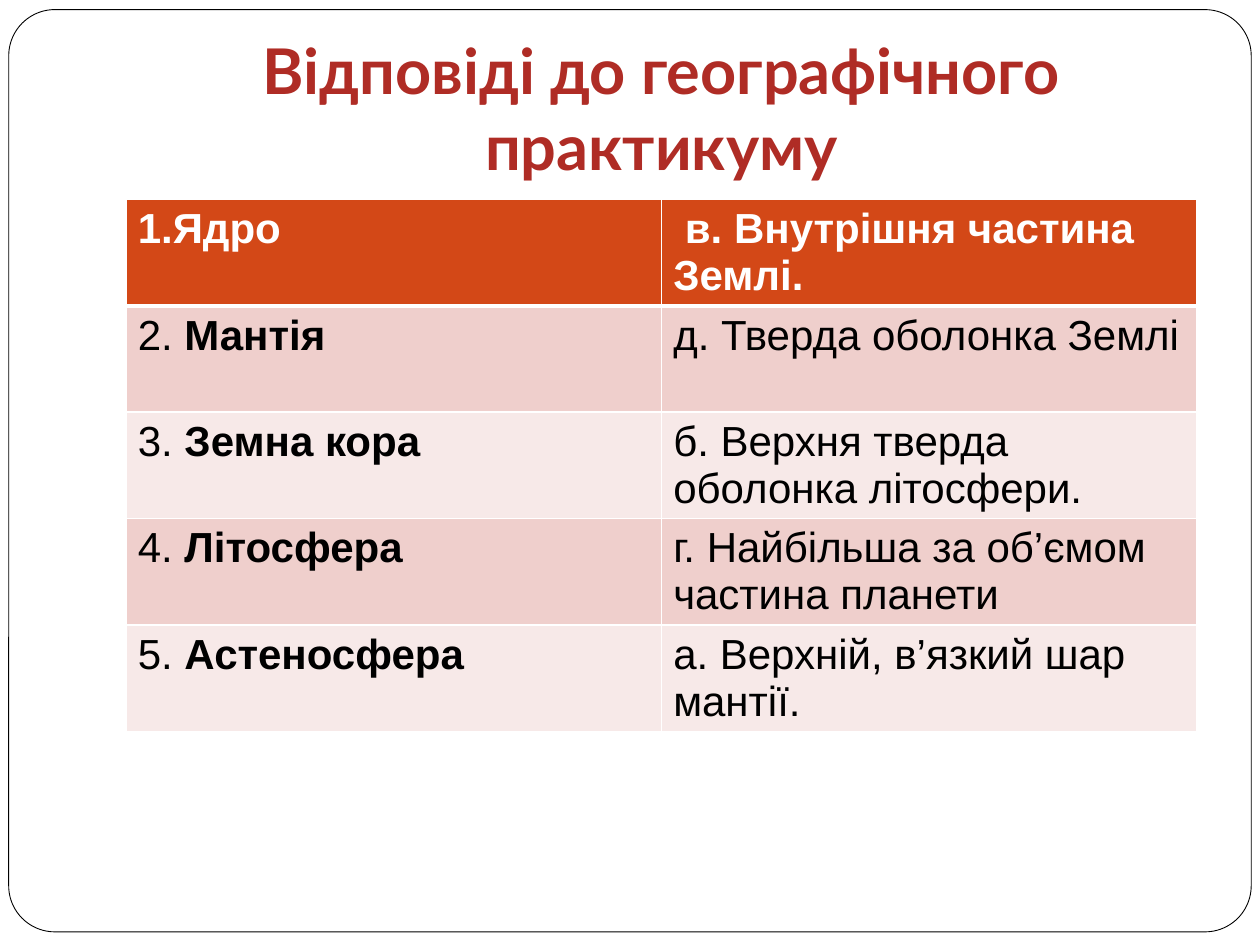
from dataclasses import dataclass

from lxml import etree
from pptx import Presentation
from pptx.dml.color import RGBColor
from pptx.enum.shapes import MSO_SHAPE
from pptx.enum.text import MSO_ANCHOR, MSO_AUTO_SIZE, PP_ALIGN
from pptx.oxml.ns import qn
from pptx.util import Pt

ROUNDED_RECTANGLE = MSO_SHAPE.ROUNDED_RECTANGLE
BOTTOM = MSO_ANCHOR.BOTTOM
CENTER = PP_ALIGN.CENTER
NO_AUTOFIT = MSO_AUTO_SIZE.NONE
TITLE_ONLY = 5


@dataclass(frozen=True)
class Theme:
    title_font: str = "Lato"
    body_font: str = "Arial"
    title_size: int = 36
    body_size: int = 24
    title: str = "AF2C25"
    text: str = "000000"
    light: str = "FFFFFF"
    header: str = "D34817"
    bands: tuple = ("EFCFCC", "F7E9E8")


THEME = Theme()
TITLE = "Відповіді до географічного практикуму"
ANSWERS = [
    (("1.", "Ядро"), " в. Внутрішня частина Землі."),
    (("2.", " Мантія"), "д. Тверда оболонка Землі"),
    (("3.", " Земна кора"), "б. Верхня тверда оболонка літосфери."),
    (("4.", " Літосфера"), "г. Найбільша за об’ємом частина планети"),
    (("5.", " Астеносфера"), "а. Верхній, в’язкий шар мантії."),
]


def place(shape, box):
    shape.left, shape.top, shape.width, shape.height = map(Pt, box)


def style_run(run, font, size, color, bold):
    run.font.name = font
    run.font.size = Pt(size)
    run.font.bold = bold
    run.font.color.rgb = RGBColor.from_string(color)


def add_frame(slide, box):
    frame = slide.shapes.add_shape(ROUNDED_RECTANGLE, *map(Pt, box))
    frame.adjustments[0] = 0.05
    frame.shadow.inherit = False
    frame.fill.solid()
    frame.fill.fore_color.rgb = RGBColor.from_string(THEME.light)
    frame.line.color.rgb = RGBColor.from_string(THEME.text)
    frame.line.width = Pt(0.5)
    slide.shapes.title._element.addprevious(frame._element)


def add_title(slide, box):
    title = slide.shapes.title
    place(title, box)
    text_frame = title.text_frame
    text_frame.text = TITLE
    text_frame.word_wrap = True
    text_frame.auto_size = NO_AUTOFIT
    text_frame.vertical_anchor = BOTTOM
    text_frame.margin_bottom = Pt(7.2)
    paragraph = text_frame.paragraphs[0]
    paragraph.alignment = CENTER
    style_run(paragraph.runs[0], THEME.title_font, THEME.title_size, THEME.title, True)


def set_borders(cell, top, bottom):
    properties = cell._tc.get_or_add_tcPr()
    for side, width in (("L", 1), ("R", 1), ("T", top), ("B", bottom)):
        line = etree.SubElement(properties, qn(f"a:ln{side}"), w=str(Pt(width)))
        fill = etree.SubElement(line, qn("a:solidFill"))
        etree.SubElement(fill, qn("a:srgbClr"), val=THEME.light)


def fill_cell(cell, parts, row):
    is_header = row == 0
    set_borders(cell, 3 if row == 1 else 1, 3 if is_header else 1)
    cell.fill.solid()
    background = THEME.header if is_header else THEME.bands[(row - 1) % 2]
    cell.fill.fore_color.rgb = RGBColor.from_string(background)
    cell.margin_left = cell.margin_right = Pt(6.75)
    paragraph = cell.text_frame.paragraphs[0]
    for text, bold in parts:
        run = paragraph.add_run()
        run.text = text
        color = THEME.light if is_header else THEME.text
        style_run(run, THEME.body_font, THEME.body_size, color, bold or is_header)


def add_answers(slide, box):
    table = slide.shapes.add_table(len(ANSWERS), 2, *map(Pt, box)).table
    for row, ((number, term), definition) in enumerate(ANSWERS):
        fill_cell(table.cell(row, 0), [(number, False), (term, True)], row)
        fill_cell(table.cell(row, 1), [(definition, False)], row)


def main():
    presentation = Presentation()
    presentation.slide_width, presentation.slide_height = Pt(720), Pt(540)
    slide = presentation.slides.add_slide(presentation.slide_layouts[TITLE_ONLY])
    add_frame(slide, (5, 5.5, 710, 527))
    add_title(slide, (72, 21.6, 612, 90))
    add_answers(slide, (72, 114, 612, 304))
    presentation.save("out.pptx")


if __name__ == "__main__":
    main()
